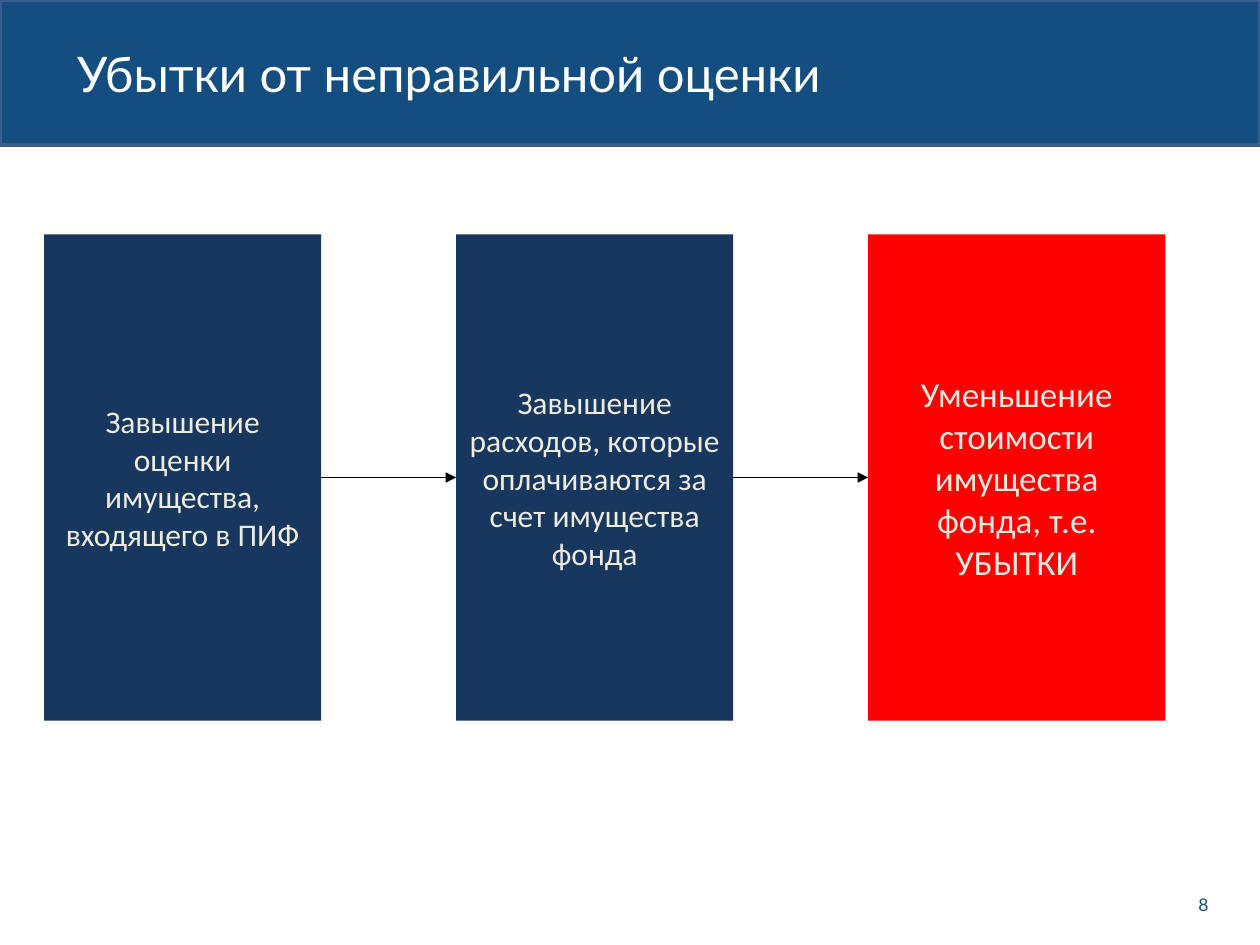
"""Build a slide that shows how wrong valuation leads to fund losses."""
import pptx
import pptx.dml.color
import pptx.enum.shapes
import pptx.enum.text
import pptx.oxml
import pptx.oxml.ns
import pptx.util
from pptx.util import Inches

COLORS = {
    "header": "144E81",
    "header_line": "3A5F8C",
    "title": "FFFFFF",
    "cause": "17375E",
    "loss": "FF0000",
    "step_text": "EEECE1",
    "arrow": "000000",
}
STEP_TOP, STEP_HEIGHT = 1.86, 3.86
STEP_LEFT, STEP_PITCH = 0.35, 3.27
STEPS = [
    ("Завышение оценки имущества, входящего в ПИФ", 2.2, "cause", 18),
    ("Завышение расходов, которые оплачиваются за счет имущества фонда", 2.2, "cause", 18),
    ("Уменьшение стоимости имущества фонда, т.е. УБЫТКИ", 2.36, "loss", 20),
]


def color(name):
    return pptx.dml.color.RGBColor.from_string(COLORS[name])


def write_text(shape, text, font_name, size, color_name, alignment):
    frame = shape.text_frame
    frame.word_wrap = True
    frame.auto_size = pptx.enum.text.MSO_AUTO_SIZE.NONE
    frame.vertical_anchor = pptx.enum.text.MSO_ANCHOR.MIDDLE
    paragraph = frame.paragraphs[0]
    paragraph.text = text
    paragraph.alignment = alignment
    paragraph.font.name = font_name
    paragraph.font.size = pptx.util.Pt(size)
    paragraph.font.color.rgb = color(color_name)


def add_rectangle(slide, left, top, width, height, fill_name):
    shape = slide.shapes.add_shape(
        pptx.enum.shapes.MSO_SHAPE.RECTANGLE,
        Inches(left), Inches(top), Inches(width), Inches(height))
    shape.shadow.inherit = False
    shape.fill.solid()
    shape.fill.fore_color.rgb = color(fill_name)
    shape.line.fill.background()
    return shape


def add_header(slide, text):
    band = add_rectangle(slide, 0, 0, 10, 1.15, "header")
    band.line.color.rgb = color("header_line")
    band.line.width = pptx.util.Pt(2)
    title = slide.shapes.title
    title.element.addprevious(band.element)
    title.left, title.top = Inches(0.51), Inches(0.18)
    title.width, title.height = Inches(7.01), Inches(0.79)
    write_text(title, text, "Lato", 28, "title", pptx.enum.text.PP_ALIGN.LEFT)


def add_step(slide, left, text, width, fill_name, size):
    step = add_rectangle(slide, left, STEP_TOP, width, STEP_HEIGHT, fill_name)
    write_text(step, text, "Calibri", size, "step_text", pptx.enum.text.PP_ALIGN.CENTER)
    return step


def add_arrow(slide, source, target):
    middle = source.top + source.height // 2
    arrow = slide.shapes.add_connector(
        pptx.enum.shapes.MSO_CONNECTOR.STRAIGHT,
        source.left + source.width, middle, target.left, middle)
    arrow.begin_connect(source, 3)
    arrow.end_connect(target, 1)
    arrow.line.color.rgb = color("arrow")
    arrow.line.width = pptx.util.Pt(0.75)
    namespace = pptx.oxml.ns.nsdecls("a")
    arrow.line._get_or_add_ln().append(
        pptx.oxml.parse_xml(f'<a:tailEnd {namespace} type="triangle"/>'))
    arrow.element.spPr.append(pptx.oxml.parse_xml(f"<a:effectLst {namespace}/>"))


def add_page_number(slide, number):
    box = slide.shapes.add_textbox(Inches(9.25), Inches(7.06), Inches(0.44), Inches(0.24))
    write_text(box, number, "Lato", 10, "header", pptx.enum.text.PP_ALIGN.RIGHT)


def main():
    presentation = pptx.Presentation()
    presentation.slide_width, presentation.slide_height = Inches(10), Inches(7.5)
    slide = presentation.slides.add_slide(presentation.slide_layouts[5])
    add_header(slide, "Убытки от неправильной оценки")
    add_page_number(slide, "8")
    steps = [add_step(slide, STEP_LEFT + index * STEP_PITCH, *step)
             for index, step in enumerate(STEPS)]
    for source, target in zip(steps, steps[1:]):
        add_arrow(slide, source, target)
    presentation.save("out.pptx")


if __name__ == "__main__":
    main()
